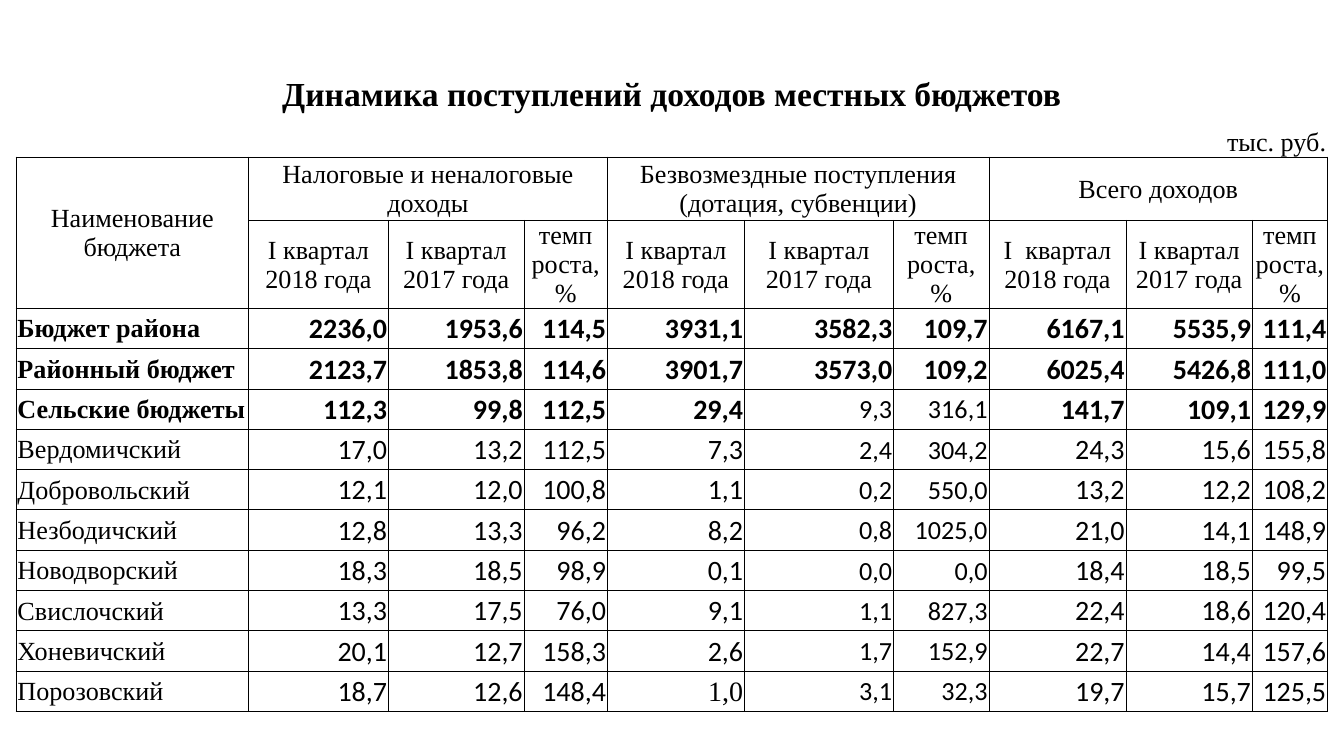
from dataclasses import dataclass

from lxml.etree import SubElement
from pptx import Presentation
from pptx.dml.color import RGBColor
from pptx.enum.text import MSO_ANCHOR, PP_ALIGN
from pptx.oxml.ns import qn
from pptx.table import Table, _Cell
from pptx.util import Inches, Pt

BLACK = RGBColor(0, 0, 0)
SERIF = "Times New Roman"
SANS = "Calibri"
LEFT, MID, RIGHT = PP_ALIGN.LEFT, PP_ALIGN.CENTER, PP_ALIGN.RIGHT
SIDES = ("L", "R", "T", "B")
WIDTHS = (1.73, 1.04, 0.74, 0.27, 0.62, 0.89, 0.13, 1.11, 0.71, 0.73, 0.29, 0.6, 0.34, 0.56)
HEIGHTS = (0.32, 0.32, 0.47, 0.47) + (0.3,) * 10
SLOTS = ((1, 1), (2, 2), (4, 1), (5, 2), (7, 1), (8, 1), (9, 2), (11, 2), (13, 1))
GAPS = ((1, 2), (3, 3), (6, 3), (10, 2), (12, 2))
RATE = "темп\nроста, %"


@dataclass
class Head:
    text: str
    row: int
    col: int
    wide: int = 1
    tall: int = 1


@dataclass
class Budget:
    name: str
    sums: str


HEADS = (
    Head("Наименование бюджета", 2, 0, tall=2),
    Head("Налоговые и неналоговые доходы", 2, 1, 4),
    Head("Безвозмездные поступления (дотация, субвенции)", 2, 5, 4),
    Head("Всего доходов", 2, 9, 5),
)
TERMS = (
    "I квартал 2018 года", "I квартал\n2017 года", RATE,
    "I квартал 2018 года", "I квартал\n2017 года", RATE,
    "I  квартал\n2018 года", "I квартал\n2017 года", RATE,
)
BUDGETS = (
    Budget("Бюджет района", "2236,0 1953,6 114,5 3931,1 3582,3 109,7 6167,1 5535,9 111,4"),
    Budget("Районный бюджет", "2123,7 1853,8 114,6 3901,7 3573,0 109,2 6025,4 5426,8 111,0"),
    Budget("Сельские бюджеты", "112,3 99,8 112,5 29,4 9,3 316,1 141,7 109,1 129,9"),
    Budget("Вердомичский", "17,0 13,2 112,5 7,3 2,4 304,2 24,3 15,6 155,8"),
    Budget("Добровольский", "12,1 12,0 100,8 1,1 0,2 550,0 13,2 12,2 108,2"),
    Budget("Незбодичский", "12,8 13,3 96,2 8,2 0,8 1025,0 21,0 14,1 148,9"),
    Budget("Новодворский", "18,3 18,5 98,9 0,1 0,0 0,0 18,4 18,5 99,5"),
    Budget("Свислочский", "13,3 17,5 76,0 9,1 1,1 827,3 22,4 18,6 120,4"),
    Budget("Хоневичский", "20,1 12,7 158,3 2,6 1,7 152,9 22,7 14,4 157,6"),
    Budget("Порозовский", "18,7 12,6 148,4 1,0 3,1 32,3 19,7 15,7 125,5"),
)


def rule(cell: _Cell, shown: str) -> None:
    props = cell._tc.get_or_add_tcPr()
    for side in SIDES:
        line = SubElement(props, qn(f"a:ln{side}"), w=str(Pt(0.5)))
        if side in shown:
            fill = SubElement(line, qn("a:solidFill"))
            SubElement(fill, qn("a:srgbClr"), val=str(BLACK))
        else:
            SubElement(line, qn("a:noFill"))


def join(grid: Table, row: int, col: int, wide: int = 1, tall: int = 1) -> _Cell:
    cell = grid.cell(row, col)
    if wide > 1 or tall > 1:
        cell.merge(grid.cell(row + tall - 1, col + wide - 1))
    return cell


def write(cell: _Cell, text: str, *, font: str = SERIF, size: float = 14,
          bold: bool = False, align: PP_ALIGN = MID,
          anchor: MSO_ANCHOR = MSO_ANCHOR.MIDDLE) -> None:
    cell.vertical_anchor = anchor
    cell.text_frame.text = text
    for para in cell.text_frame.paragraphs:
        para.alignment = align
        for run in para.runs:
            run.font.name = font
            run.font.size = Pt(size)
            run.font.bold = bold
            run.font.color.rgb = BLACK


def style(grid: Table) -> None:
    grid.first_row = grid.horz_banding = False
    for col, width in zip(grid.columns, WIDTHS):
        col.width = Inches(width)
    for num, height in enumerate(HEIGHTS):
        grid.rows[num].height = Inches(height)
        shown = ("", "B")[num] if num < 2 else "LRTB"
        for cell in grid.rows[num].cells:
            cell.margin_left = cell.margin_right = cell.margin_top = Inches(0.01)
            cell.margin_bottom = 0
            rule(cell, shown)
            cell.fill.background()


def add_heads(grid: Table) -> None:
    title = join(grid, 0, 0, len(WIDTHS))
    write(title, "Динамика поступлений доходов местных бюджетов",
          size=18, bold=True, anchor=MSO_ANCHOR.BOTTOM)
    for col, wide in GAPS:
        join(grid, 1, col, wide)
    write(grid.cell(1, 12), "тыс. руб.", align=RIGHT, anchor=MSO_ANCHOR.BOTTOM)
    for head in HEADS:
        write(join(grid, head.row, head.col, head.wide, head.tall), head.text)
    for (col, wide), term in zip(SLOTS, TERMS):
        write(join(grid, 3, col, wide), term)


def add_sums(grid: Table) -> None:
    for num, item in enumerate(BUDGETS):
        row = num + 4
        write(grid.cell(row, 0), item.name, bold=num < 3, align=LEFT)
        for (col, wide), value in zip(SLOTS, item.sums.split()):
            small = num > 1 and col in (7, 8)
            font = SERIF if value == "1,0" else SANS
            write(join(grid, row, col, wide), value, font=font,
                  size=14 if small else 15, bold=num < 3 and not small, align=RIGHT)


def main() -> None:
    deck = Presentation()
    deck.slide_width = Inches(10)
    deck.slide_height = deck.slide_width * 9 // 16
    slide = deck.slides.add_slide(deck.slide_layouts[6])
    frame = slide.shapes.add_table(len(HEIGHTS), len(WIDTHS), Inches(0.12), Inches(0.53),
                                   Inches(9.76), Inches(4.87))
    style(frame.table)
    add_heads(frame.table)
    add_sums(frame.table)
    deck.save("out.pptx")


if __name__ == "__main__":
    main()
